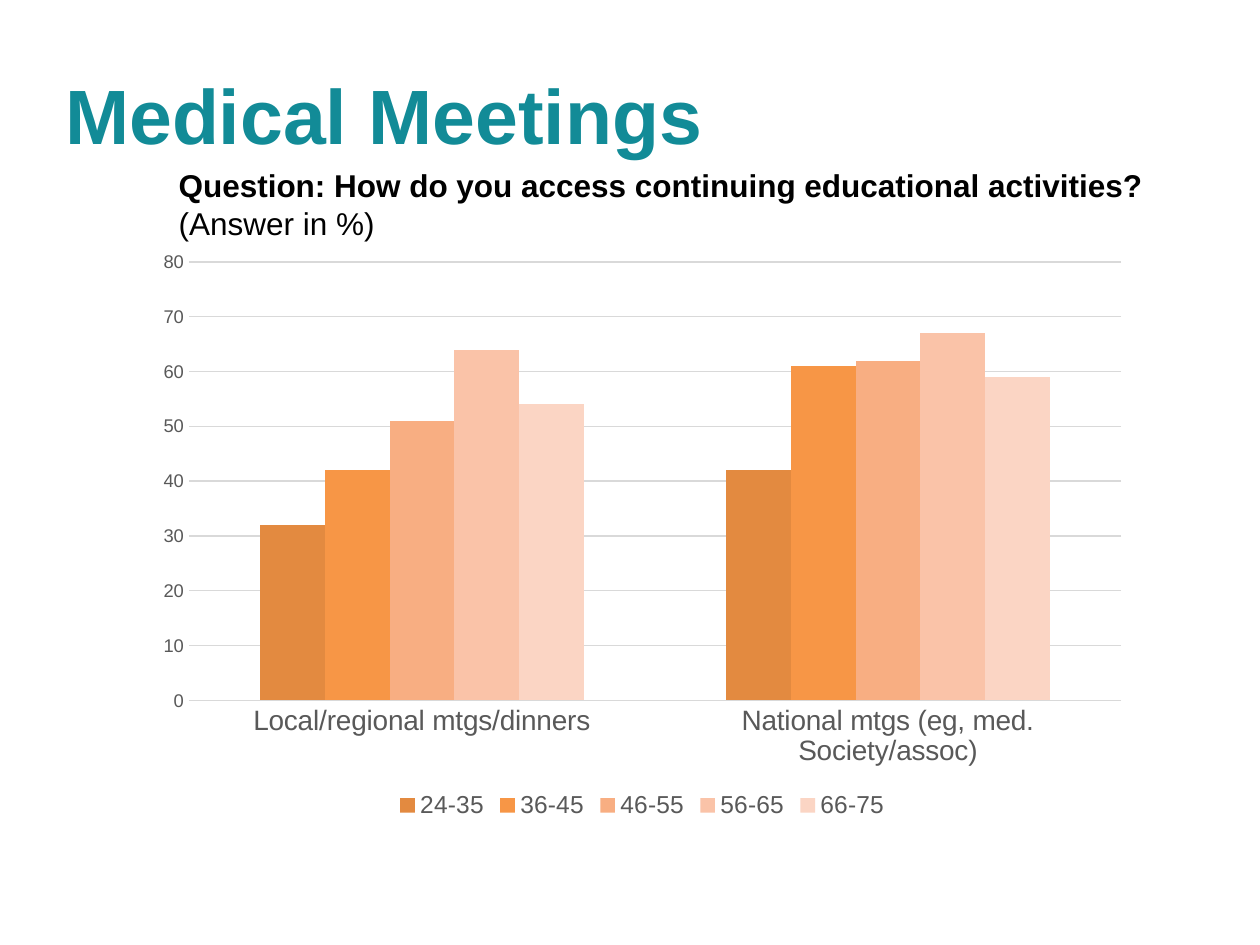
from dataclasses import dataclass

from pptx import Presentation
from pptx.chart.data import CategoryChartData
from pptx.dml.color import RGBColor
from pptx.enum.chart import XL_CHART_TYPE, XL_LEGEND_POSITION, XL_TICK_MARK
from pptx.enum.text import MSO_ANCHOR, PP_ALIGN
from pptx.util import Pt

FONT = "Arial"
TEAL = RGBColor(0x12, 0x8B, 0x97)
BLACK = RGBColor(0, 0, 0)
GRAY = RGBColor(0x59, 0x59, 0x59)
GRID = RGBColor(0xD9, 0xD9, 0xD9)


@dataclass(frozen=True)
class AgeGroup:
    name: str
    values: tuple[int, int]
    color: RGBColor


CATEGORIES = ("Local/regional mtgs/dinners", "National mtgs (eg, med. Society/assoc)")
AGE_GROUPS = (
    AgeGroup("24-35", (32, 42), RGBColor(0xE3, 0x8A, 0x40)),
    AgeGroup("36-45", (42, 61), RGBColor(0xF7, 0x96, 0x46)),
    AgeGroup("46-55", (51, 62), RGBColor(0xF8, 0xAE, 0x82)),
    AgeGroup("56-65", (64, 67), RGBColor(0xFA, 0xC3, 0xA8)),
    AgeGroup("66-75", (54, 59), RGBColor(0xFB, 0xD5, 0xC4)),
)


def set_font(font, size: float, color: RGBColor, bold: bool = False) -> None:
    font.name = FONT
    font.size = Pt(size)
    font.bold = bold
    font.color.rgb = color


def add_text(p, text: str, *, size: float, color: RGBColor = BLACK, bold: bool = False) -> None:
    r = p.add_run()
    r.text = text
    set_font(r.font, size, color, bold)


def set_line(line) -> None:
    line.color.rgb = GRID
    line.width = Pt(0.75)


def add_title(slide) -> None:
    sp = slide.shapes.title
    sp.left, sp.top, sp.width, sp.height = Pt(30), Pt(24), Pt(660), Pt(82)
    tf = sp.text_frame
    tf.vertical_anchor = MSO_ANCHOR.MIDDLE
    p = tf.paragraphs[0]
    p.alignment = PP_ALIGN.LEFT
    add_text(p, "Medical Meetings", size=44, color=TEAL, bold=True)


def add_age_chart(slide) -> None:
    data = CategoryChartData()
    data.categories = CATEGORIES
    for group in AGE_GROUPS:
        data.add_series(group.name, group.values)
    chart = slide.shapes.add_chart(XL_CHART_TYPE.COLUMN_CLUSTERED,
                                   Pt(82), Pt(137), Pt(570), Pt(334), data).chart
    set_font(chart.font, 10, BLACK)
    chart.has_title = False
    chart.has_legend = True
    chart.legend.position = XL_LEGEND_POSITION.BOTTOM
    chart.legend.include_in_layout = False
    set_font(chart.legend.font, 14, GRAY)

    plot = chart.plots[0]
    plot.gap_width = 219
    plot.overlap = 0
    plot.vary_by_categories = False
    for series, group in zip(plot.series, AGE_GROUPS):
        series.format.fill.solid()
        series.format.fill.fore_color.rgb = group.color

    for axis, size in ((chart.category_axis, 16), (chart.value_axis, 10.5)):
        axis.major_tick_mark = axis.minor_tick_mark = XL_TICK_MARK.NONE
        set_font(axis.tick_labels.font, size, GRAY)
    set_line(chart.category_axis.format.line)

    value_axis = chart.value_axis
    value_axis.minimum_scale, value_axis.maximum_scale = 0, 80
    value_axis.major_unit = 10
    value_axis.format.line.fill.background()
    set_line(value_axis.major_gridlines.format.line)


def add_question(slide) -> None:
    tf = slide.shapes.add_textbox(Pt(95), Pt(91.5), Pt(566), Pt(52.5)).text_frame
    tf.word_wrap = True
    p = tf.paragraphs[0]
    add_text(p, "Question: How do you access continuing educational activities? ",
             size=18, bold=True)
    add_text(p, "(Answer in %)", size=18)


def main() -> None:
    prs = Presentation()
    prs.slide_width, prs.slide_height = Pt(720), Pt(540)
    slide = prs.slides.add_slide(prs.slide_layouts[5])
    add_title(slide)
    add_age_chart(slide)
    add_question(slide)
    prs.save("out.pptx")


if __name__ == "__main__":
    main()
